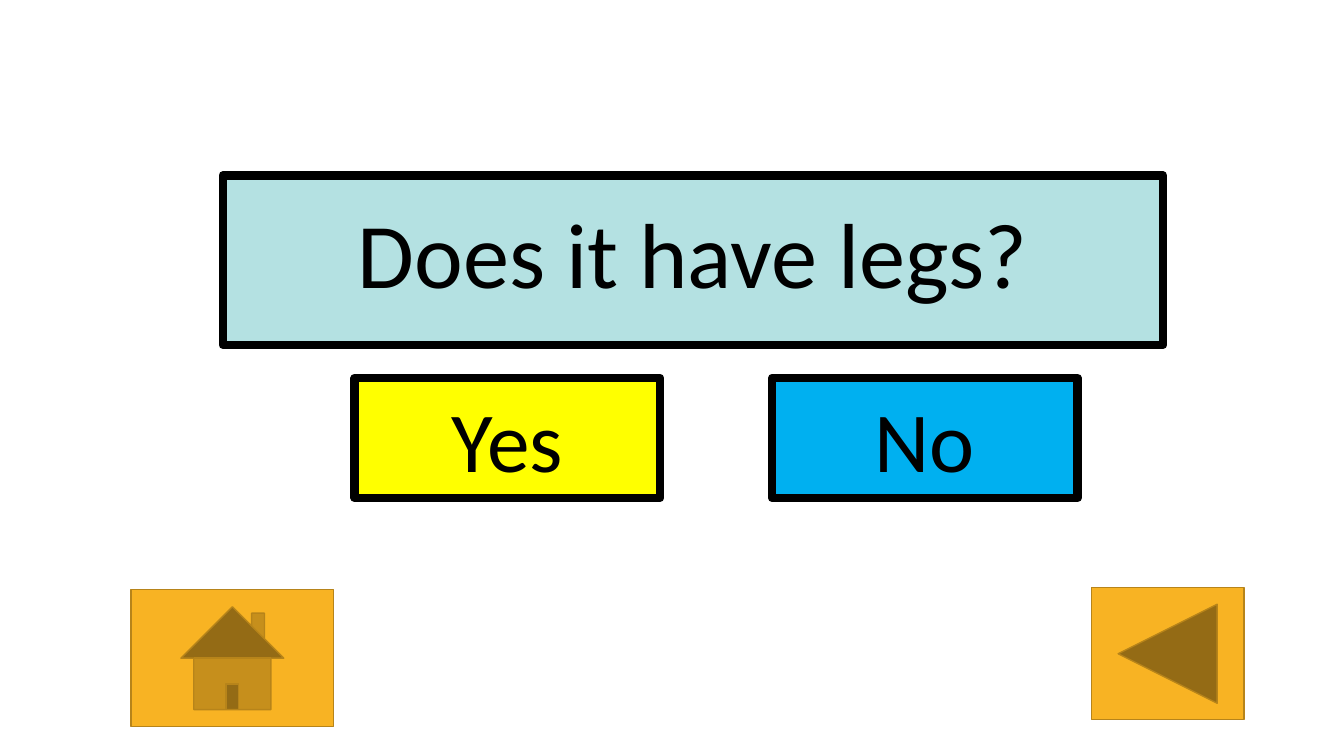
from lxml import etree
from pptx import Presentation
from pptx.dml.color import RGBColor
from pptx.enum.shapes import MSO_SHAPE
from pptx.enum.text import MSO_ANCHOR, PP_ALIGN
from pptx.oxml.ns import qn
from pptx.util import Pt

RECT = MSO_SHAPE.RECTANGLE
HOME = MSO_SHAPE.ACTION_BUTTON_HOME
BACK = MSO_SHAPE.ACTION_BUTTON_BACK_OR_PREVIOUS
TOP, MIDDLE = MSO_ANCHOR.TOP, MSO_ANCHOR.MIDDLE
CENTER = PP_ALIGN.CENTER

FONT = "Calibri"
BLACK, AQUA, YELLOW, BLUE = "000000", "B4E1E2", "FFFF00", "00B0F0"
ORANGE, BROWN = "F8B323", "B7841A"


def color(value):
    return RGBColor.from_string(value)


def add_box(slide, kind, box, fill, line, width):
    sp = slide.shapes.add_shape(kind, *(Pt(v) for v in box))
    sp.shadow.inherit = False
    sp.fill.solid()
    sp.fill.fore_color.rgb = color(fill)
    sp.line.color.rgb = color(line)
    sp.line.width = Pt(width)
    # Rounded outline corners
    etree.SubElement(sp.line._get_or_add_ln(), qn("a:round"))
    return sp


def add_text(sp, text, size, anchor=MIDDLE, spacing=1.0, inset=3.6):
    tf = sp.text_frame
    tf.word_wrap = True
    tf.vertical_anchor = anchor
    tf.margin_top = Pt(inset)
    p = tf.paragraphs[0]
    p.alignment = CENTER
    p.line_spacing = spacing
    r = p.add_run()
    r.text = text
    r.font.name = FONT
    r.font.size = Pt(size)
    r.font.color.rgb = color(BLACK)


def add_question(slide, box, text):
    sp = add_box(slide, RECT, box, AQUA, BLACK, 6)
    add_text(sp, text, 66, anchor=TOP, spacing=1.1, inset=7)


def add_answers(slide, box, answers):
    # Equal buttons, first and last flush with the sides of the box
    left, top, width, height = box
    button_width = 218.2
    step = (width - button_width) / (len(answers) - 1)
    for i, (text, fill) in enumerate(answers):
        button = (left + i * step, top, button_width, height)
        add_text(add_box(slide, RECT, button, fill, BLACK, 6), text, 61)


def add_navigation(slide, box):
    # Home at the left end, back at the right end
    left, top, width, height = box
    back_width = 108.8
    add_box(slide, HOME, (left, top + 1.4, 144.7, height - 1.4), ORANGE, BROWN, 1)
    add_box(slide, BACK, (left + width - back_width, top, back_width, 94.3),
            ORANGE, BROWN, 1)


def main():
    prs = Presentation()
    prs.slide_width, prs.slide_height = Pt(960), Pt(540)
    slide = prs.slides.add_slide(prs.slide_layouts[6])
    add_question(slide, (159.1, 125.3, 671.8, 121), "Does it have legs?")
    add_answers(slide, (253.4, 270, 516.3, 85.7), [("Yes", YELLOW), ("No", BLUE)])
    add_navigation(slide, (93.6, 419.8, 794.9, 99.3))
    prs.save("out.pptx")


if __name__ == "__main__":
    main()
